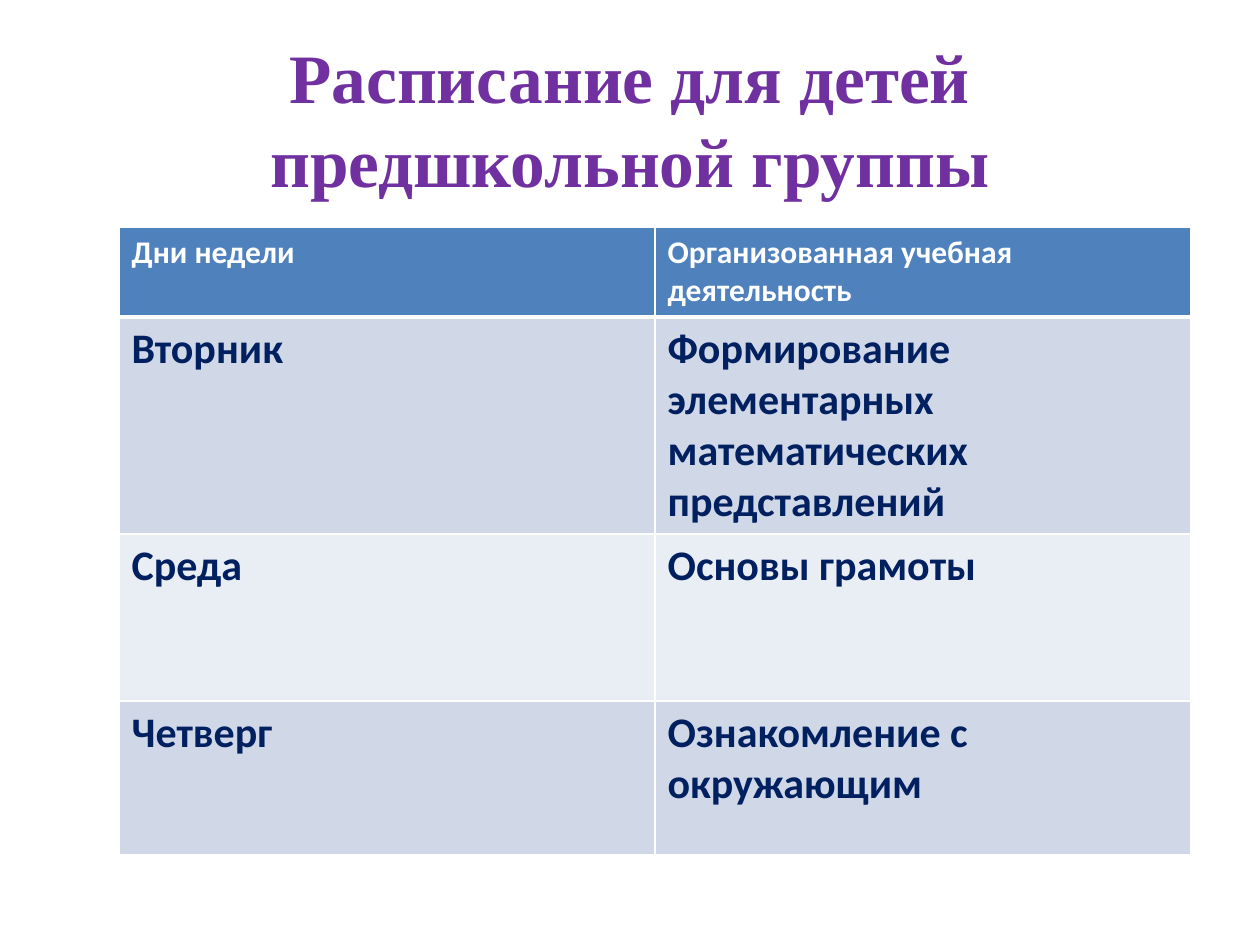
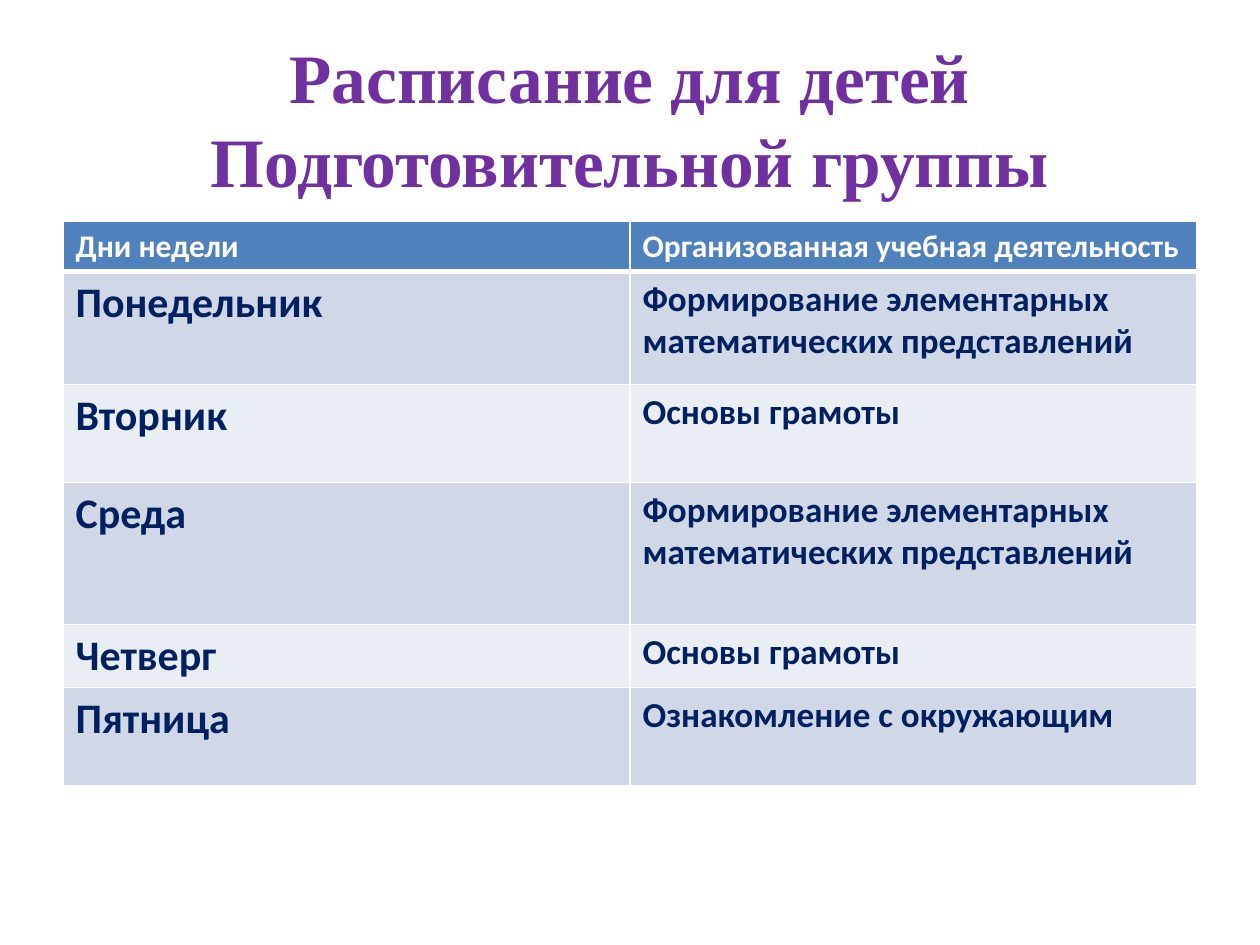
import lxml.etree
import pptx
import pptx.dml.color
import pptx.enum.text
import pptx.oxml.ns
import pptx.util

PX_PER_INCH = 126
HEADER_FILL = "4F81BD"
BAND_FILLS = ("D0D8E8", "E9EDF4")
BORDER_COLOR = "FFFFFF"
TITLE_FONT = {"name": "Times New Roman", "size": 39.6, "bold": True, "color": "7030A0"}
HEADER_FONT = {"name": "Calibri", "size": 18, "bold": True, "color": "FFFFFF"}
BODY_FONT = {**HEADER_FONT, "size": 24, "color": "002060"}
TITLE_BOX = (63, 38, 1134, 158)
HEADINGS = ("Дни недели", "Организованная учебная деятельность")
MATHS = "Формирование элементарных математических представлений"
LITERACY = "Основы грамоты"
SURROUNDINGS = "Ознакомление с окружающим"

SCHEDULES = (
    {
        "title": "Расписание для детей предшкольной группы",
        "box": (119, 227, 1072),
        "row_heights": (90, 217, 167, 154),
        "lesson_size": 24,
        "lessons": (("Вторник", MATHS), ("Среда", LITERACY), ("Четверг", SURROUNDINGS)),
    },
    {
        "title": "Расписание для детей Подготовительной группы",
        "box": (63, 221, 1134),
        "row_heights": (50, 113, 98, 142, 63, 98),
        "lesson_size": 20,
        "lessons": (
            ("Понедельник", MATHS),
            ("Вторник", LITERACY),
            ("Среда", MATHS),
            ("Четверг", LITERACY),
            ("Пятница", SURROUNDINGS),
        ),
    },
)


def px(length):
    """Turn pixels into EMU."""
    return pptx.util.Emu(round(length * 914400 / PX_PER_INCH))


def rgb(hex_color):
    """Turn a hex string into a colour."""
    return pptx.dml.color.RGBColor.from_string(hex_color)


def write(paragraph, text, font_format):
    """Add a run of text in the given format."""
    run = paragraph.add_run()
    run.text = text
    for attribute, value in font_format.items():
        if attribute == "color":
            run.font.color.rgb = rgb(value)
        else:
            setattr(run.font, attribute, pptx.util.Pt(value) if attribute == "size" else value)


def set_borders(cell, widths):
    """Draw the cell's sides in the border colour, widths in points by side."""
    properties = cell._tc.get_or_add_tcPr()
    qn = pptx.oxml.ns.qn
    for side, width in widths.items():
        line = lxml.etree.SubElement(properties, qn(f"a:ln{side}"), w=str(pptx.util.Pt(width)))
        fill = lxml.etree.SubElement(line, qn("a:solidFill"))
        lxml.etree.SubElement(fill, qn("a:srgbClr"), val=BORDER_COLOR)


def add_title(slide, box, text):
    """Add the centred slide title."""
    frame = slide.shapes.add_textbox(*map(px, box)).text_frame
    frame.word_wrap = True
    frame.vertical_anchor = pptx.enum.text.MSO_ANCHOR.MIDDLE
    paragraph = frame.paragraphs[0]
    paragraph.alignment = pptx.enum.text.PP_ALIGN.CENTER
    paragraph.line_spacing = pptx.util.Pt(48)
    write(paragraph, text, TITLE_FONT)


def add_timetable(slide, box, row_heights, lessons, lesson_size):
    """Add the table of days and lessons with equal columns."""
    left, top, width = box
    rows = (HEADINGS, *lessons)
    table = slide.shapes.add_table(
        len(rows), len(HEADINGS), px(left), px(top), px(width), px(sum(row_heights))
    ).table
    for column in table.columns:
        column.width = px(width / len(HEADINGS))
    lesson_font = {**BODY_FONT, "size": lesson_size}
    for r, (texts, height) in enumerate(zip(rows, row_heights)):
        table.rows[r].height = px(height)
        fonts = (BODY_FONT, lesson_font) if r else (HEADER_FONT, HEADER_FONT)
        borders = {"L": 1, "R": 1, "T": 3 if r == 1 else 1, "B": 1 if r else 3}
        for c, (text, font_format) in enumerate(zip(texts, fonts)):
            cell = table.cell(r, c)
            set_borders(cell, borders)
            cell.fill.solid()
            cell.fill.fore_color.rgb = rgb(BAND_FILLS[(r - 1) % 2] if r else HEADER_FILL)
            write(cell.text_frame.paragraphs[0], text, font_format)


def add_schedule_slide(presentation, title, box, row_heights, lessons, lesson_size):
    """Add one group's schedule."""
    slide = presentation.slides.add_slide(presentation.slide_layouts[6])
    add_title(slide, TITLE_BOX, title)
    add_timetable(slide, box, row_heights, lessons, lesson_size)


def main():
    """Build and save the presentation."""
    presentation = pptx.Presentation()
    presentation.slide_width = px(1260)
    presentation.slide_height = px(945)
    for schedule in SCHEDULES:
        add_schedule_slide(presentation, **schedule)
    presentation.save("out.pptx")


if __name__ == "__main__":
    main()
